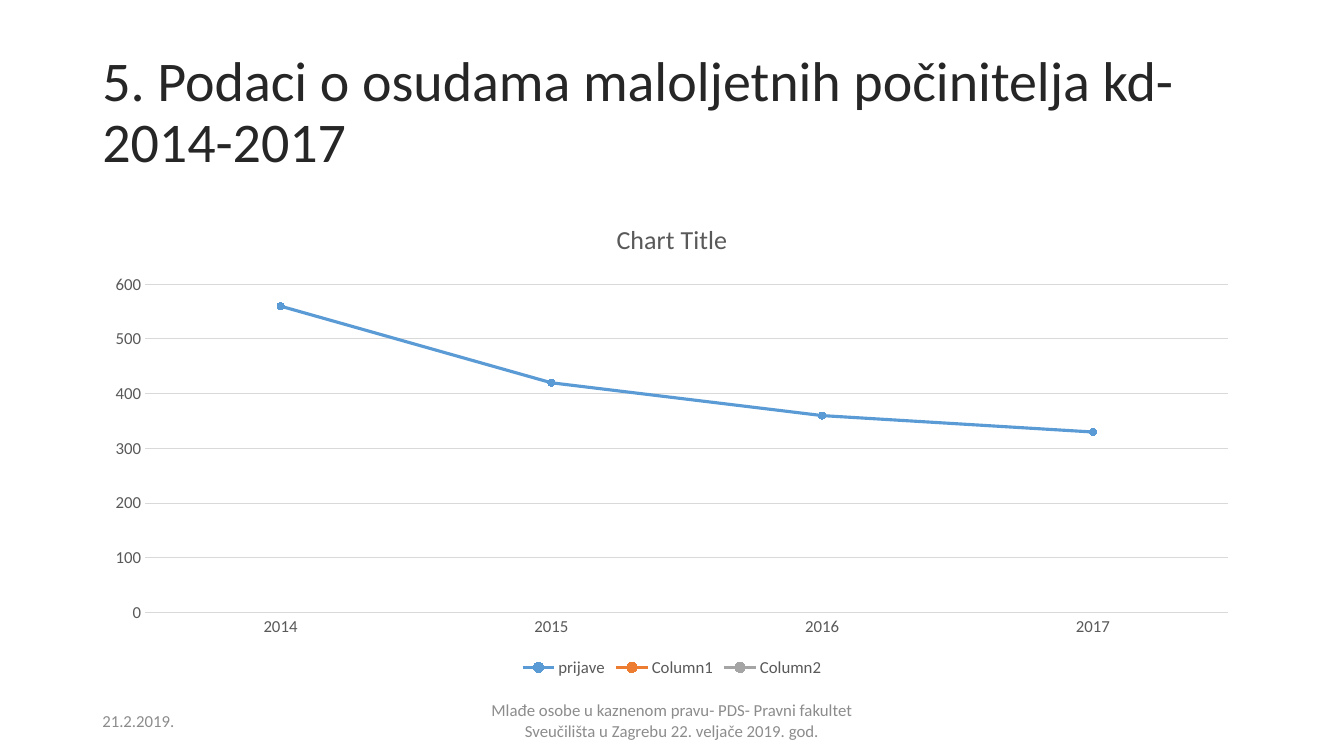
from pptx import Presentation
from pptx.chart.data import CategoryChartData
from pptx.dml.color import RGBColor
from pptx.enum.chart import XL_CHART_TYPE, XL_LEGEND_POSITION, XL_MARKER_STYLE, XL_TICK_MARK
from pptx.enum.text import MSO_ANCHOR, PP_ALIGN
from pptx.util import Pt

PX = 9525  # EMU per pixel, 96 pixels to the inch
FONT = "Calibri"
TITLE_COLOR = RGBColor(0x26, 0x26, 0x26)
CHART_TEXT = RGBColor(0x59, 0x59, 0x59)
FOOTER_COLOR = RGBColor(0x8C, 0x8C, 0x8C)
GRID_COLOR = RGBColor(0xD9, 0xD9, 0xD9)
BLUE = RGBColor(0x5B, 0x9B, 0xD5)
ORANGE = RGBColor(0xED, 0x7D, 0x31)
GRAY = RGBColor(0xA5, 0xA5, 0xA5)

LINE_MARKERS = XL_CHART_TYPE.LINE_MARKERS
LEGEND_BOTTOM = XL_LEGEND_POSITION.BOTTOM
CIRCLE = XL_MARKER_STYLE.CIRCLE
NO_TICK = XL_TICK_MARK.NONE
MIDDLE = MSO_ANCHOR.MIDDLE
LEFT, CENTER = PP_ALIGN.LEFT, PP_ALIGN.CENTER

YEARS = ["2014", "2015", "2016", "2017"]
SERIES = [
    ("prijave", [560, 420, 360, 330], BLUE),
    ("Column1", [None] * len(YEARS), ORANGE),
    ("Column2", [None] * len(YEARS), GRAY),
]


def to_emu(box):
    return [length * PX for length in box]


def style_font(font, size, color):
    font.name = FONT
    font.size = Pt(size)
    font.bold = False
    font.color.rgb = color


def add_text(page, box, text, size, color, align=LEFT, line_spacing=1.0):
    frame = page.shapes.add_textbox(*to_emu(box)).text_frame
    frame.word_wrap = True
    frame.vertical_anchor = MIDDLE
    frame.text = text
    para = frame.paragraphs[0]
    para.alignment = align
    para.line_spacing = line_spacing
    style_font(para.runs[0].font, size, color)


def style_line(line, color, width):
    line.color.rgb = color
    line.width = Pt(width)


def style_axes(chart):
    categories, values = chart.category_axis, chart.value_axis
    for axis in (categories, values):
        axis.major_tick_mark = axis.minor_tick_mark = NO_TICK
        style_font(axis.tick_labels.font, 12, CHART_TEXT)
    style_line(categories.format.line, GRID_COLOR, 0.75)
    values.format.line.fill.background()
    values.minimum_scale, values.maximum_scale, values.major_unit = 0, 600, 100
    style_line(values.major_gridlines.format.line, GRID_COLOR, 0.75)


def add_convictions_chart(page, box):
    data = CategoryChartData()
    data.categories = YEARS
    for name, counts, _ in SERIES:
        data.add_series(name, counts)
    chart = page.shapes.add_chart(LINE_MARKERS, *to_emu(box), data).chart
    style_font(chart.font, 12, CHART_TEXT)
    chart.plots[0].vary_by_categories = False

    chart.has_title = True
    title = chart.chart_title
    title.include_in_layout = False
    title.text_frame.text = "Chart Title"
    style_font(title.text_frame.paragraphs[0].runs[0].font, 18.6, CHART_TEXT)

    chart.has_legend = True
    chart.legend.position = LEGEND_BOTTOM
    chart.legend.include_in_layout = False
    style_font(chart.legend.font, 12, CHART_TEXT)
    style_axes(chart)

    for series, (_, _, color) in zip(chart.plots[0].series, SERIES):
        series.smooth = False
        style_line(series.format.line, color, 2.25)
        marker = series.marker
        marker.style = CIRCLE
        marker.size = 5
        marker.format.fill.solid()
        marker.format.fill.fore_color.rgb = color
        style_line(marker.format.line, color, 0.75)


def add_footer(page, box):
    left, top, width, height = box
    add_text(page, (left, top, 288, height), "21.2.2019.", 12, FOOTER_COLOR)
    note_width = 432
    note_left = left + (width - note_width) // 2
    add_text(page, (note_left, top, note_width, height),
             "Mlađe osobe u kaznenom pravu- PDS- Pravni fakultet "
             "Sveučilišta u Zagrebu 22. veljače 2019. god.",
             12, FOOTER_COLOR, CENTER)


def main():
    deck = Presentation()
    deck.slide_width, deck.slide_height = to_emu((1280, 720))
    page = deck.slides.add_slide(deck.slide_layouts[6])
    left, width = 88, 1104
    add_text(page, (left, 39, width, 139),
             "5. Podaci o osudama maloljetnih počinitelja kd- 2014-2017",
             40, TITLE_COLOR, line_spacing=0.9)
    add_convictions_chart(page, (left, 192, width, 457))
    add_footer(page, (left, 667, width, 38))
    deck.save("out.pptx")


if __name__ == "__main__":
    main()
